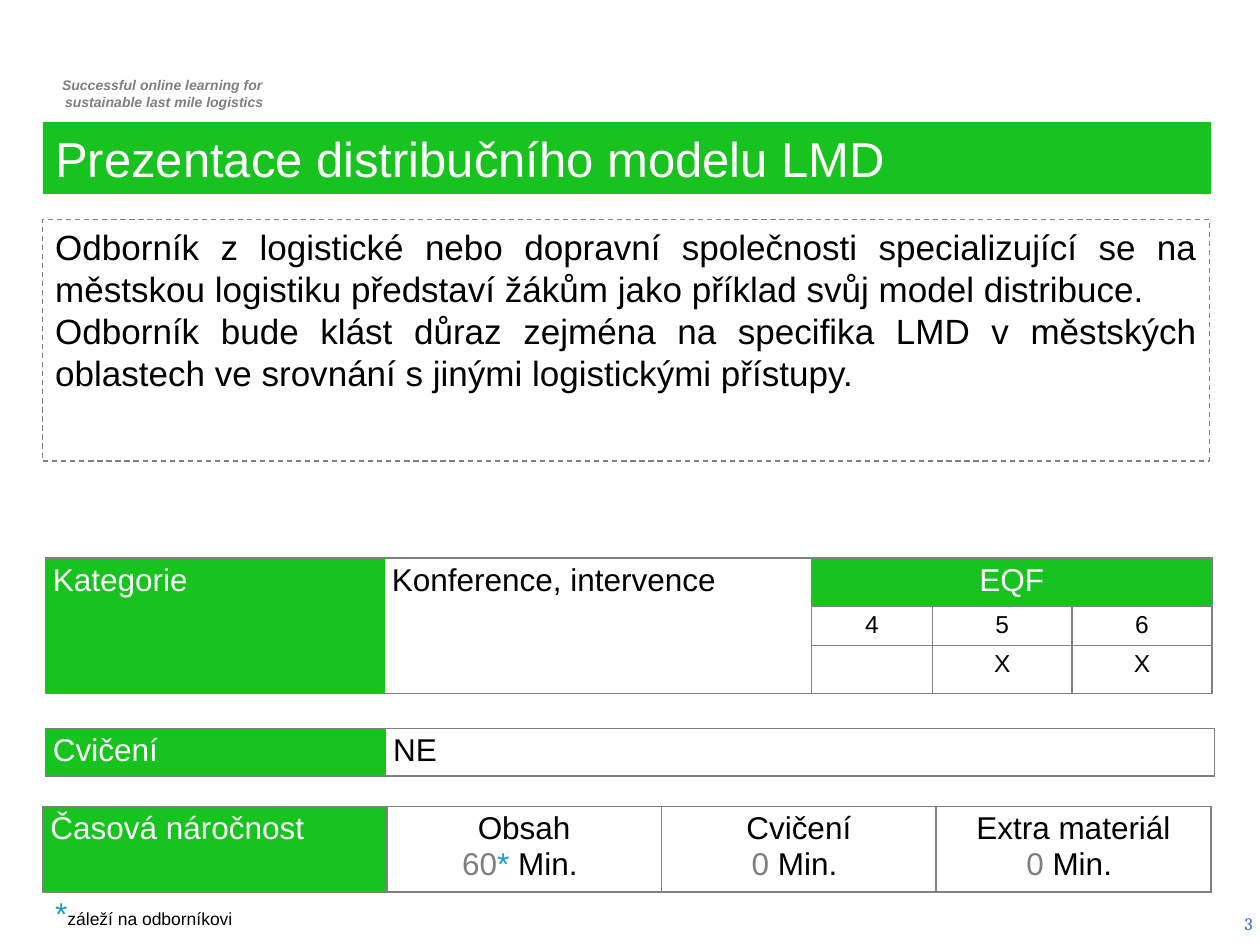
from lxml import etree
from pptx import Presentation
from pptx.dml.color import RGBColor
from pptx.enum.dml import MSO_LINE_DASH_STYLE as Dash
from pptx.enum.shapes import MSO_SHAPE as Shape
from pptx.enum.text import MSO_ANCHOR as Anchor, PP_ALIGN as Align
from pptx.oxml.ns import qn
from pptx.util import Inches, Pt

COLORS = {
    "green": "18C320", "gray": "808080", "soft": "7F7F7F", "blue": "189DC3",
    "number": "3366CC", "white": "FFFFFF", "black": "000000",
}


def color(name):
    return RGBColor.from_string(COLORS[name])


def write(frame, lines, align=Align.LEFT, size=18, name="Arial", **style):
    """Fill a frame; each line is a list of (text, colour[, size]) spans."""
    frame.word_wrap = True
    for index, line in enumerate(lines):
        para = frame.paragraphs[0] if index == 0 else frame.add_paragraph()
        para.alignment = align
        for text, ink, *own_size in line:
            span = para.add_run()
            span.text = text
            span.font.color.rgb = color(ink)
            values = {"size": Pt(own_size[0] if own_size else size), "name": name, **style}
            for key, value in values.items():
                setattr(span.font, key, value)


def add_text(page, place, lines, anchor=Anchor.TOP, **style):
    box = page.shapes.add_textbox(*map(Inches, place))
    box.text_frame.vertical_anchor = anchor
    write(box.text_frame, lines, **style)


def add_panel(page, place, lines, fill=None, **style):
    """Rectangle that is either filled or outlined with dashes."""
    panel = page.shapes.add_shape(Shape.RECTANGLE, *map(Inches, place))
    panel.shadow.inherit = False
    if fill:
        panel.fill.solid()
        panel.fill.fore_color.rgb = color(fill)
        panel.line.fill.background()
    else:
        panel.fill.background()
        panel.line.color.rgb = color("gray")
        panel.line.width = Pt(0.75)
        panel.line.dash_style = Dash.DASH
    panel.text_frame.vertical_anchor = Anchor.TOP
    write(panel.text_frame, lines, **style)


def set_borders(cell, inks):
    """Draw the left, right, top and bottom edges in the given colours."""
    props = cell._tc.get_or_add_tcPr()
    for index, (side, ink) in enumerate(zip("LRTB", inks)):
        edge = etree.Element(qn(f"a:ln{side}"), w=str(Pt(1)))
        fill = etree.SubElement(edge, qn("a:solidFill"))
        etree.SubElement(fill, qn("a:srgbClr"), val=COLORS[ink])
        props.insert(index, edge)


def add_grid(page, left, top, widths, heights, divider="gray"):
    """Empty bordered table; divider colours the edge after the label column."""
    frame = page.shapes.add_table(
        len(heights), len(widths), Inches(left), Inches(top),
        Inches(sum(widths)), Inches(sum(heights)))
    table = frame.table
    table.first_row = table.horz_banding = False
    for column, width in zip(table.columns, widths):
        column.width = Inches(width)
    for row, height in zip(table.rows, heights):
        row.height = Inches(height)
        for index, cell in enumerate(row.cells):
            set_borders(cell, (divider if index == 1 else "gray",
                               divider if index == 0 else "gray", "gray", "gray"))
            cell.fill.background()
            cell.margin_left = cell.margin_right = Inches(0.06)
            cell.margin_top = cell.margin_bottom = Inches(0.04)
    return table


def fill_cell(cell, lines, fill=None, align=Align.CENTER, size=18):
    write(cell.text_frame, lines, align, size)
    if fill:
        cell.fill.solid()
        cell.fill.fore_color.rgb = color(fill)


def add_label(table, text):
    fill_cell(table.cell(0, 0), [[(text, "white")]], "green", Align.JUSTIFY)


def add_category_table(page):
    table = add_grid(page, 0.36, 4.43, [2.69, 3.39, 0.96, 1.11, 1.11],
                     [0.37, 0.31, 0.37], "green")
    for column in (0, 1):
        table.cell(0, column).merge(table.cell(2, column))
    table.cell(0, 2).merge(table.cell(0, 4))
    add_label(table, "Kategorie")
    fill_cell(table.cell(0, 1), [[("Konference, intervence", "black")]], align=Align.JUSTIFY)
    fill_cell(table.cell(0, 2), [[("EQF", "white")]], "green")
    for row, marks in enumerate([("4", "5", "6"), ("", "X", "X")], 1):
        for column, mark in enumerate(marks, 2):
            if mark:
                fill_cell(table.cell(row, column), [[(mark, "black")]], size=14)


def add_exercise_table(page):
    table = add_grid(page, 0.36, 5.78, [2.7, 6.58], [0.37], "green")
    add_label(table, "Cvičení")
    fill_cell(table.cell(0, 1), [[("NE", "black")]], align=Align.JUSTIFY)


def add_time_table(page):
    table = add_grid(page, 0.34, 6.4, [2.73] + [2.18] * 3, [0.68])
    add_label(table, "Časová náročnost")
    parts = [
        ("Obsah", [("60", "soft"), ("* ", "blue")]),
        ("Cvičení", [("0 ", "soft")]),
        ("Extra materiál", [("0 ", "soft")]),
    ]
    for column, (title, amount) in enumerate(parts, 1):
        fill_cell(table.cell(0, column),
                  [[(title, "black")], amount + [("Min. ", "black")]])


def main():
    deck = Presentation()
    deck.slide_width, deck.slide_height = Inches(10), Inches(7.5)
    page = deck.slides.add_slide(deck.slide_layouts[6])

    # Motto and page number
    add_text(page, (0.29, 0.56, 2.03, 0.37),
             [[("Successful online learning for ", "soft")],
              [("sustainable last mile logistics", "soft")]],
             align=Align.CENTER, size=8, bold=True, italic=True)
    add_text(page, (7.71, 7.13, 2.33, 0.4), [[("3", "number")]], Anchor.MIDDLE,
             align=Align.RIGHT, size=10, name="Cambria")

    # Title and description
    add_panel(page, (0.34, 0.97, 9.27, 0.57),
              [[("Prezentace distribučního modelu LMD", "white")]], "green", size=28)
    add_panel(page, (0.34, 1.74, 9.26, 1.92),
              [[("Odborník z logistické nebo dopravní společnosti specializující se na "
                 "městskou logistiku představí žákům jako příklad svůj model distribuce.",
                 "black")],
               [("Odborník bude klást důraz zejména na specifika LMD v městských "
                 "oblastech ve srovnání s jinými logistickými přístupy.", "black")]],
              align=Align.JUSTIFY, size=20)

    # Tables
    add_category_table(page)
    add_exercise_table(page)
    add_time_table(page)

    # Footnote
    add_text(page, (0.34, 7.05, 4.44, 0.4),
             [[("*", "blue"), ("záleží na odborníkovi", "black", 10)]])

    deck.save("out.pptx")


if __name__ == "__main__":
    main()
